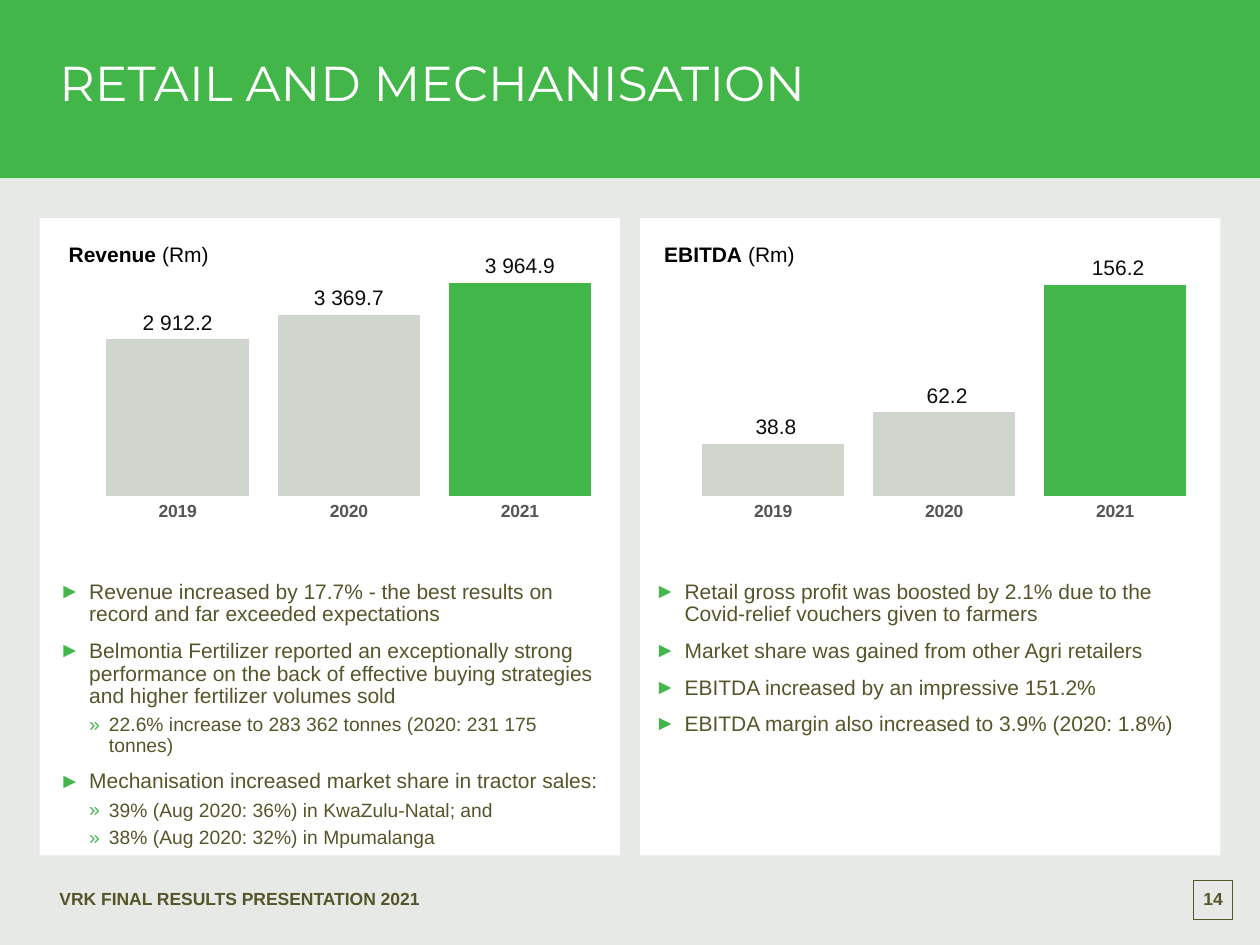
"""Builds the retail and mechanisation results slide with two charts and commentary."""
from lxml import etree
from pptx import Presentation
from pptx.chart.data import CategoryChartData
from pptx.dml.color import RGBColor
from pptx.enum.chart import XL_CHART_TYPE, XL_LABEL_POSITION, XL_TICK_LABEL_POSITION, XL_TICK_MARK
from pptx.enum.shapes import MSO_SHAPE
from pptx.enum.text import MSO_ANCHOR, PP_ALIGN
from pptx.oxml import parse_xml
from pptx.oxml.ns import nsdecls, qn
from pptx.util import Pt

GREEN, GREY, OLIVE, WHITE = "43B649", "E7E9E6", "545629", "FFFFFF"
rgb = RGBColor.from_string

presentation = Presentation()
presentation.slide_width, presentation.slide_height = Pt(720), Pt(540)
slide = presentation.slides.add_slide(presentation.slide_layouts[6])


def add_text(left, top, width, height, lines, size, color, font="Arial", bold=False):
    box = slide.shapes.add_textbox(Pt(left), Pt(top), Pt(width), Pt(height))
    frame = box.text_frame
    frame.word_wrap = True
    frame.margin_left = frame.margin_right = frame.margin_top = frame.margin_bottom = 0
    frame.text = "\n".join(lines)
    for paragraph in frame.paragraphs:
        paragraph.line_spacing = 0.9
        face = paragraph.runs[0].font
        face.size, face.name, face.bold = Pt(size), font, bold
        face.color.rgb = rgb(color)
    return frame


def set_layout(parent, before, inner, **places):
    target = '<c:layoutTarget val="inner"/>' if inner else ""
    modes = "".join(f'<c:{axis}Mode val="edge"/>' for axis in "xy")
    values = "".join(f'<c:{key} val="{value}"/>' for key, value in places.items())
    for old in parent.findall(qn("c:layout")):
        parent.remove(old)
    layout = parse_xml(
        f'<c:layout {nsdecls("c")}><c:manualLayout>{target}{modes}{values}'
        "</c:manualLayout></c:layout>"
    )
    parent.find(qn(before)).addprevious(layout)


for left, top, width, height, color in [
    (0, 0, 720, 102, GREEN),
    (0, 102, 720, 438, GREY),
    (365.7, 124.6, 331.7, 364.2, WHITE),
    (22.7, 124.6, 331.7, 364.2, WHITE),
]:
    panel = slide.shapes.add_shape(MSO_SHAPE.RECTANGLE, Pt(left), Pt(top), Pt(width), Pt(height))
    panel.shadow.inherit = False
    panel.fill.solid()
    panel.fill.fore_color.rgb = rgb(color)
    panel.line.fill.background()

page_frame = slide.shapes.add_shape(MSO_SHAPE.RECTANGLE, Pt(682), Pt(503.2), Pt(22.4), Pt(22.4))
page_frame.shadow.inherit = False
page_frame.fill.background()
page_frame.line.color.rgb = rgb(OLIVE)
page_frame.line.width = Pt(0.5)

add_text(34, 34, 652, 31, ["RETAIL AND MECHANISATION"], 28, WHITE, "Montserrat")
page_number = add_text(682, 503.2, 22.4, 22.4, ["14"], 10, OLIVE, bold=True)
page_number.paragraphs[0].alignment = PP_ALIGN.CENTER
footer = add_text(34, 503.2, 638, 22.4, ["VRK FINAL RESULTS PRESENTATION 2021"], 10, OLIVE, bold=True)
page_number.vertical_anchor = footer.vertical_anchor = MSO_ANCHOR.MIDDLE

revenue_points = [
    (0, "Revenue increased by 17.7% - the best results on record and far exceeded expectations"),
    (0, "Belmontia Fertilizer reported an exceptionally strong performance on the back of "
        "effective buying strategies and higher fertilizer volumes sold"),
    (1, "22.6% increase to 283 362 tonnes (2020: 231 175 tonnes)"),
    (0, "Mechanisation increased market share in tractor sales:"),
    (1, "39% (Aug 2020: 36%) in KwaZulu-Natal; and"),
    (1, "38% (Aug 2020: 32%) in Mpumalanga"),
]
ebitda_points = [
    (0, "Retail gross profit was boosted by 2.1% due to the Covid-relief vouchers given to farmers"),
    (0, "Market share was gained from other Agri retailers"),
    (0, "EBITDA increased by an impressive 151.2%"),
    (0, "EBITDA margin also increased to 3.9% (2020: 1.8%)"),
]
bullet_styles = [(12, 8, 17, -17, "►"), (11, 4, 28.3, -11.3, "»")]

for left, measure, amounts, ceiling, points in [
    (34, "Revenue", (2912.2, 3369.7, 3964.9), 3970, revenue_points),
    (374.2, "EBITDA", (38.8, 62.2, 156.2), 158, ebitda_points),
]:
    commentary = add_text(left, 332, 312, 155.5, [line for _, line in points], 12, OLIVE)
    for paragraph, (level, _) in zip(commentary.paragraphs, points):
        size, space, margin, indent, mark = bullet_styles[level]
        paragraph.level = level
        paragraph.space_before = Pt(space)
        paragraph.runs[0].font.size = Pt(size)
        properties = paragraph._p.get_or_add_pPr()
        properties.set("marL", str(Pt(margin)))
        properties.set("indent", str(Pt(indent)))
        bullet_color = etree.SubElement(properties, qn("a:buClr"))
        etree.SubElement(bullet_color, qn("a:srgbClr"), val=GREEN)
        etree.SubElement(properties, qn("a:buFont"), typeface="Arial")
        etree.SubElement(properties, qn("a:buChar"), char=mark)

    results = CategoryChartData(number_format="#\\ ##0.0")
    results.categories = ["2019", "2020", "2021"]
    results.add_series("Series 1", amounts)
    chart = slide.shapes.add_chart(
        XL_CHART_TYPE.COLUMN_CLUSTERED, Pt(left), Pt(132.5), Pt(312), Pt(170), results
    ).chart
    chart.has_legend = False
    chart.font.size, chart.font.name = Pt(10), "Arial"
    chart.font.color.rgb = rgb(OLIVE)

    heading = chart.chart_title.text_frame.paragraphs[0]
    for words, bold in [(measure, True), (" (Rm)", False)]:
        run = heading.add_run()
        run.text = words
        run.font.size, run.font.name, run.font.bold = Pt(12), "Arial", bold
        run.font.color.rgb = rgb("000000")
    chart.chart_title.include_in_layout = True
    set_layout(chart.chart_title._element, "c:overlay", False, x=0.01, y=0.02)
    set_layout(chart._chartSpace.chart.plotArea, "c:barChart", True, x=0.06, y=0.17, w=0.94, h=0.72)

    years = chart.category_axis
    years.major_tick_mark = XL_TICK_MARK.NONE
    years.format.line.fill.background()
    years.tick_labels.font.size, years.tick_labels.font.name = Pt(10), "Arial"
    years.tick_labels.font.bold = True
    years.tick_labels.font.color.rgb = rgb("555456")
    scale = chart.value_axis
    scale.minimum_scale, scale.maximum_scale = 0, ceiling
    scale.major_unit = 1
    scale.has_major_gridlines = False
    scale.tick_label_position = XL_TICK_LABEL_POSITION.NONE
    scale.visible = False

    columns = chart.plots[0]
    columns.gap_width = 20
    columns.vary_by_categories = False
    bars = columns.series[0]
    latest_year = bars.points[2]
    for part, color in [(bars, "D0D5CD"), (latest_year, GREEN)]:
        part.format.fill.solid()
        part.format.fill.fore_color.rgb = rgb(color)
    labels = bars.data_labels
    labels.show_value = True
    labels.position = XL_LABEL_POSITION.OUTSIDE_END
    labels.number_format, labels.number_format_is_linked = "#\\ ##0.0", False
    labels.font.size, labels.font.name = Pt(12), "Arial"
    labels.font.color.rgb = rgb("0D0D0D")

presentation.save("out.pptx")
